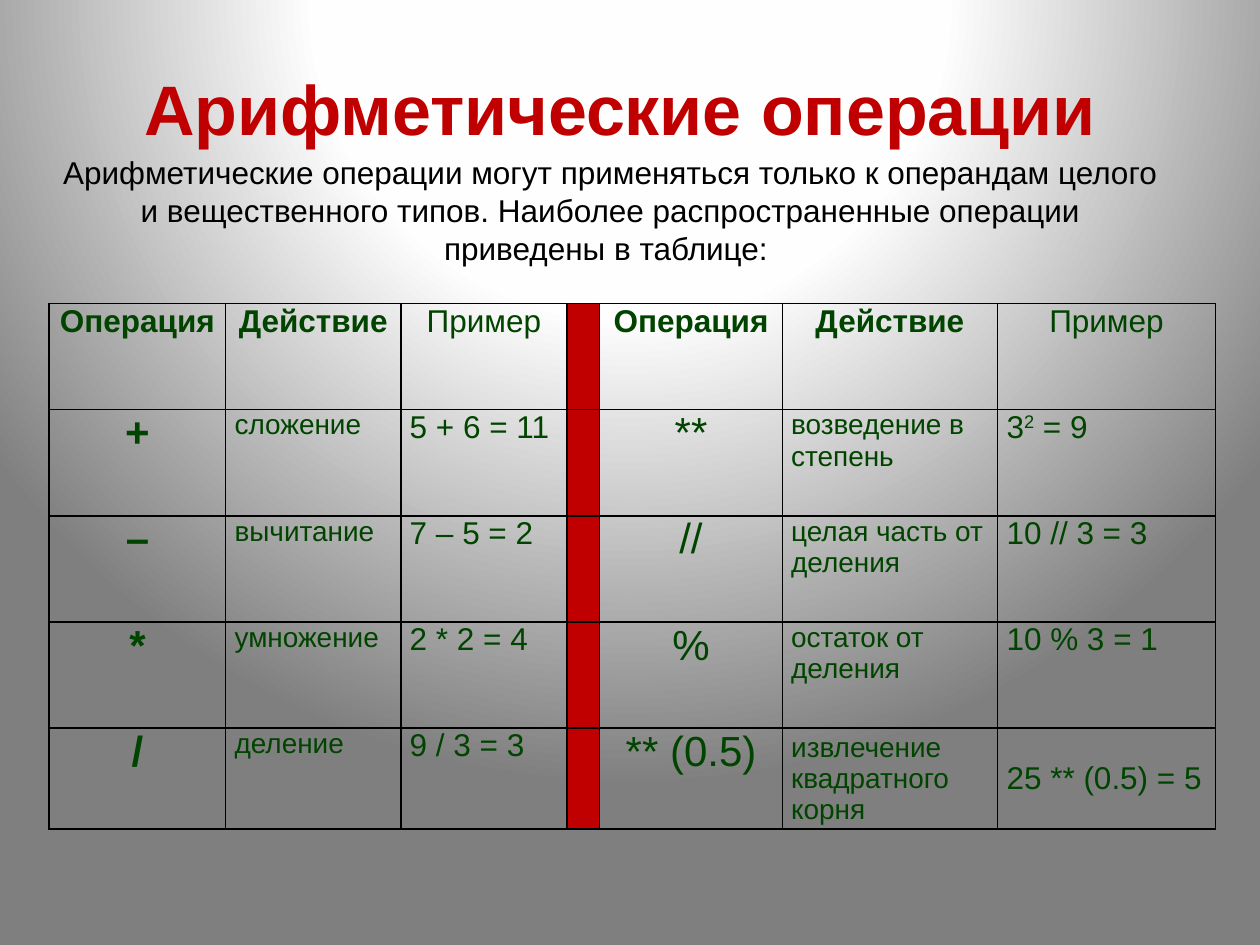
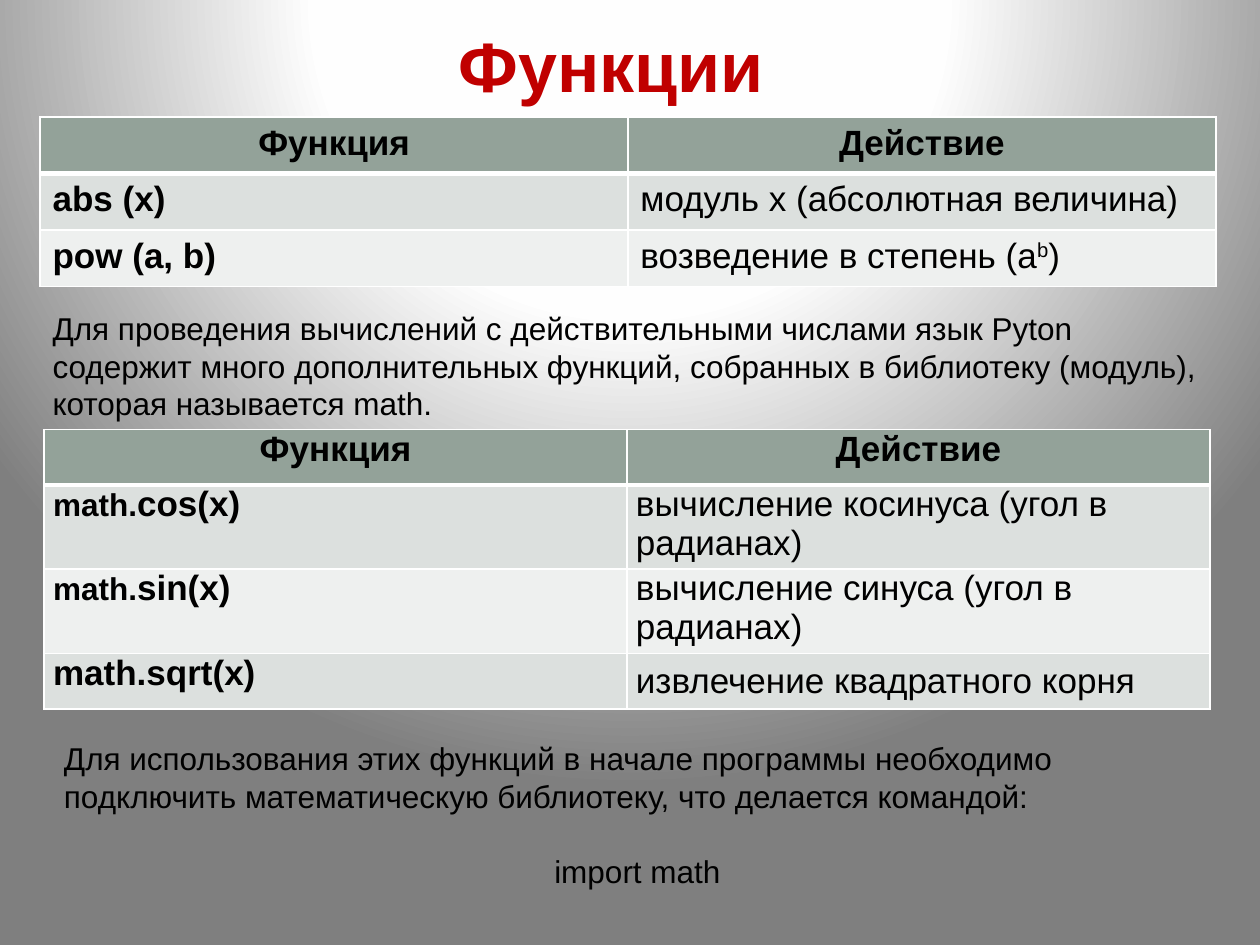
import dataclasses
import lxml.etree
import pptx
import pptx.dml.color
import pptx.enum.text
import pptx.oxml
import pptx.oxml.ns
import pptx.util

Cm = pptx.util.Cm
Pt = pptx.util.Pt
qn = pptx.oxml.ns.qn
LEFT = pptx.enum.text.PP_ALIGN.LEFT
CENTER = pptx.enum.text.PP_ALIGN.CENTER
MIDDLE = pptx.enum.text.MSO_ANCHOR.MIDDLE


@dataclasses.dataclass(frozen=True)
class Theme:
    font: str = "Arial"
    title: str = "C00000"
    divider: str = "C00000"
    text: str = "000000"
    operation: str = "004400"
    header: str = "93A299"
    bands: tuple = ("DCE0DE", "EEF0EF")
    grid_dark: str = "000000"
    grid_light: str = "FFFFFF"
    backdrop: tuple = ((0, "FFFFFF"), (40, "FEFEFE"), (100, "7F7F7F"))
    title_size: int = 40
    symbol_size: int = 24
    function_size: int = 20
    body_size: int = 18
    action_size: int = 16


theme = Theme()


def write(para, pieces, size, color, bold=False, align=LEFT):
    """Fill a paragraph with one run for each piece, all formatted alike."""
    para.alignment = align
    for piece in pieces:
        span = para.add_run()
        span.text = piece
        span.font.name = theme.font
        span.font.size = Pt(size)
        span.font.bold = bold
        span.font.color.rgb = pptx.dml.color.RGBColor.from_string(color)


def lay_table(page, left, top, widths, heights, line_color, margins, header_rule=1):
    """Add an unfilled table with ruled cells; header_rule is the line under row 0."""
    table = page.shapes.add_table(
        len(heights), len(widths), Cm(left), Cm(top), Cm(sum(widths)), Cm(sum(heights))
    ).table
    table.first_row = False
    table.horz_banding = False
    for column, width in zip(table.columns, widths):
        column.width = Cm(width)
    for index, (row, height) in enumerate(zip(table.rows, heights)):
        row.height = Cm(height)
        rules = {
            "L": 1,
            "R": 1,
            "T": header_rule if index == 1 else 1,
            "B": header_rule if index == 0 else 1,
        }
        for cell in row.cells:
            cell.margin_left = cell.margin_right = Cm(margins[0])
            cell.margin_top = cell.margin_bottom = Cm(margins[1])
            properties = cell._tc.get_or_add_tcPr()
            for side, weight in rules.items():
                line = lxml.etree.SubElement(properties, qn(f"a:ln{side}"), w=str(Pt(weight)))
                fill = lxml.etree.SubElement(line, qn("a:solidFill"))
                lxml.etree.SubElement(fill, qn("a:srgbClr"), val=line_color)
            cell.fill.background()
    return table


deck = pptx.Presentation()
deck.slide_width = Cm(25.4)
deck.slide_height = Cm(19.05)

# Shared radial backdrop
master = deck.slide_master
master.background.fill.solid()
backdrop = master.element.find(".//" + qn("p:bgPr"))
stops = "".join(
    f'<a:gs pos="{position * 1000}"><a:srgbClr val="{color}"/></a:gs>'
    for position, color in theme.backdrop
)
backdrop.replace(backdrop[0], pptx.oxml.parse_xml(
    f'<a:gradFill {pptx.oxml.ns.nsdecls("a")} rotWithShape="1"><a:gsLst>{stops}</a:gsLst>'
    '<a:path path="circle"><a:fillToRect l="50000" t="-80000" r="50000" b="180000"/></a:path>'
    "</a:gradFill>"
))

operations_page, functions_page = (
    deck.slides.add_slide(deck.slide_layouts[6]) for _ in range(2)
)

# Titles and running text
title_style = (theme.title_size, theme.title, True, CENTER)
body_style = (theme.body_size, theme.text, False, LEFT)
body_centered = (theme.body_size, theme.text, False, CENTER)
text_boxes = [
    (operations_page, (0.79, 1.19, 23.42, 1.96), [("Арифметические операции", title_style)]),
    (operations_page, (0.99, 2.97, 22.63, 2.57), [(
        "Арифметические операции могут применяться только к операндам целого и вещественного "
        "типов. Наиболее распространенные операции приведены в таблице: ", body_centered)]),
    (functions_page, (0.51, 0.33, 23.62, 1.96), [("Функции", title_style)]),
    (functions_page, (0.81, 6.1, 23.62, 2.57), [(
        "Для проведения вычислений с действительными числами язык Pyton содержит много "
        "дополнительных функций, собранных в библиотеку (модуль), которая называется math.",
        body_style)]),
    (functions_page, (1.04, 14.78, 23.62, 3.33), [
        ("Для использования этих функций в начале программы необходимо подключить "
         "математическую библиотеку, что делается командой:", body_style),
        ("import math", body_centered)]),
]
for page, place, lines in text_boxes:
    frame = page.shapes.add_textbox(*map(Cm, place)).text_frame
    frame.word_wrap = True
    for index, (line, style) in enumerate(lines):
        para = frame.add_paragraph() if index else frame.paragraphs[0]
        if index:
            para.space_before = Pt(21)
        write(para, [line], *style)

# Arithmetic operations: two groups of three columns around a red divider
operation_groups = [
    (0, True, [
        ("+", "сложение", ["5 + 6 = 11"]),
        ("–", "вычитание", ["7 – 5 = 2"]),
        ("*", "умножение", ["2 * 2 = 4"]),
        ("/", "деление", ["9 / 3 = 3"]),
    ]),
    (4, False, [
        ("**", "возведение в степень", ["3", "2", " = 9"]),
        ("//", "целая часть от деления", ["10 // 3 = 3"]),
        ("%", "остаток от деления", ["10 % 3 = 1"]),
        ("** (0.5)", "извлечение квадратного корня", ["25 ** (0.5) = 5"]),
    ]),
]
operations = lay_table(
    operations_page, 0.99, 6.12, [3.56, 3.53, 3.35, 0.66, 3.68, 4.34, 4.39],
    [2.14] * 4 + [2.03], theme.grid_dark, (0.18, 0),
)
for first, bold_symbol, rows in operation_groups:
    for offset, heading in enumerate(["Операция", "Действие", "Пример"]):
        write(operations.cell(0, first + offset).text_frame.paragraphs[0], [heading],
              theme.body_size, theme.operation, offset < 2, CENTER)
    for number, (symbol, action, example) in enumerate(rows, 1):
        entries = [
            ([symbol], theme.symbol_size, bold_symbol, CENTER),
            ([action], theme.action_size, False, LEFT),
            (example, theme.body_size, False, LEFT),
        ]
        for offset, (pieces, size, bold, align) in enumerate(entries):
            write(operations.cell(number, first + offset).text_frame.paragraphs[0],
                  pieces, size, theme.operation, bold, align)
for row in range(5):
    divider = operations.cell(row, 3)
    divider.fill.solid()
    divider.fill.fore_color.rgb = pptx.dml.color.RGBColor.from_string(theme.divider)
for column in (5, 6):
    operations.cell(4, column).vertical_anchor = MIDDLE

# Function tables: built-in ones, then the math library
function_tables = [
    ((0.81, 2.36), [11.85] * 2, [1.14] * 3, (0.25, 0.13), [
        (["abs (x)"], ["модуль x (абсолютная величина)"]),
        (["pow (a, b)"], ["возведение в степень (a", "b", ")"]),
    ]),
    ((0.89, 8.66), [11.75] * 2, [1.12, 1.69, 1.69, 1.12], (0.18, 0), [
        (["math.", "cos(x)"], ["вычисление косинуса (угол в радианах)"]),
        (["math.", "sin(x)"], ["вычисление синуса (угол в радианах)"]),
        (["math.sqrt(x)"], ["извлечение квадратного корня"]),
    ]),
]
laid_tables = []
for place, widths, heights, margins, rows in function_tables:
    table = lay_table(functions_page, *place, widths, heights, theme.grid_light, margins, 3)
    laid_tables.append(table)
    for number, entries in enumerate([(["Функция"], ["Действие"])] + rows):
        is_header = number == 0
        color = theme.header if is_header else theme.bands[(number - 1) % 2]
        for column, pieces in enumerate(entries):
            cell = table.cell(number, column)
            cell.fill.solid()
            cell.fill.fore_color.rgb = pptx.dml.color.RGBColor.from_string(color)
            write(cell.text_frame.paragraphs[0], pieces, theme.function_size, theme.text,
                  is_header or column == 0, CENTER if is_header else LEFT)

builtin_functions, math_functions = laid_tables
for row in (1, 2):
    prefix = math_functions.cell(row, 0).text_frame.paragraphs[0].runs[0]
    prefix.font.size = Pt(theme.body_size)
math_functions.cell(3, 1).vertical_anchor = MIDDLE

# Exponents are raised
for power in (operations.cell(1, 6), builtin_functions.cell(2, 1)):
    exponent = power.text_frame.paragraphs[0].runs[1]
    exponent._r.get_or_add_rPr().set("baseline", "30000")

deck.save("out.pptx")
